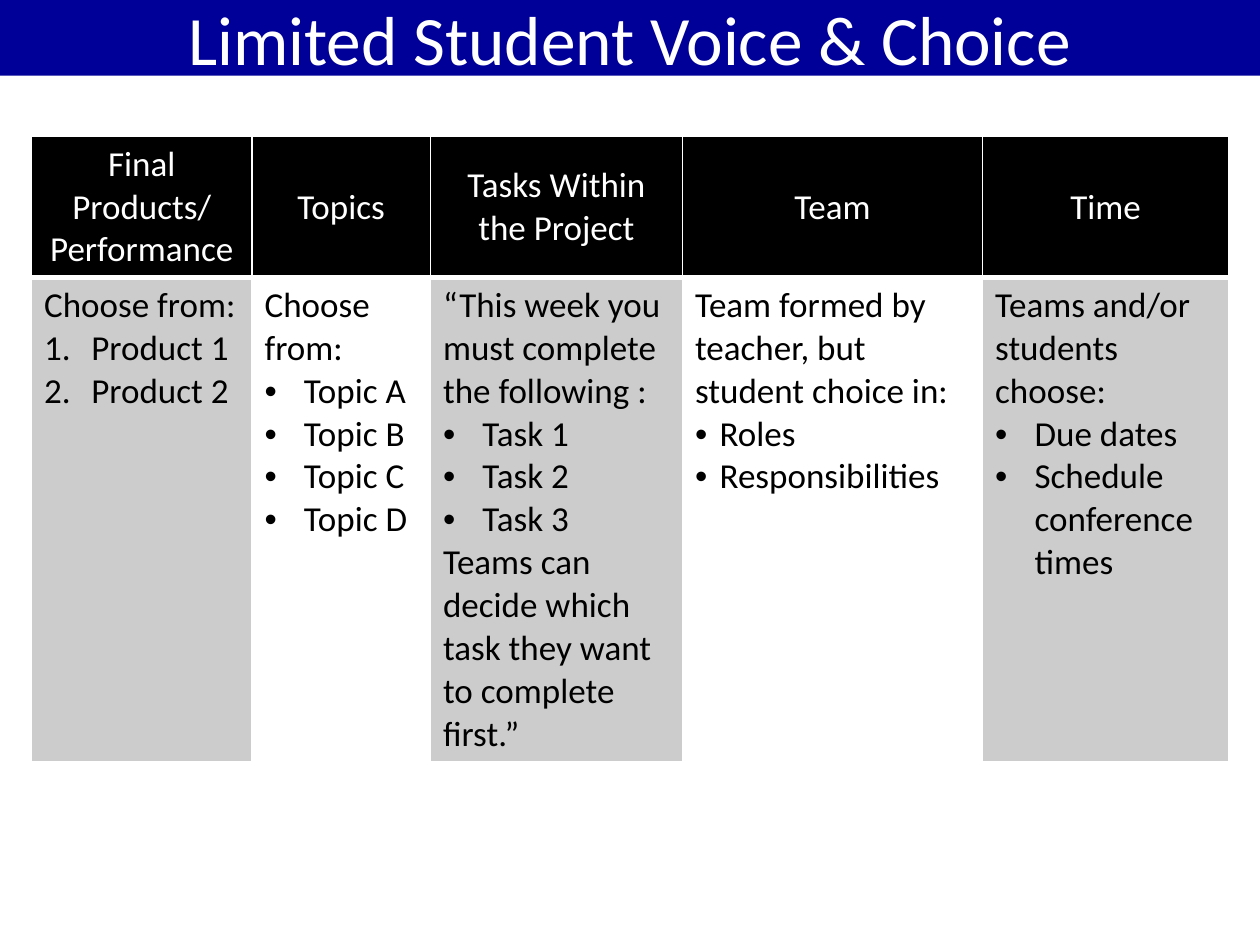
from dataclasses import dataclass

from lxml import etree
from pptx import Presentation
from pptx.dml.color import RGBColor
from pptx.enum.shapes import MSO_SHAPE
from pptx.enum.text import MSO_ANCHOR, PP_ALIGN
from pptx.oxml.ns import qn
from pptx.util import Pt

RECTANGLE = MSO_SHAPE.RECTANGLE
MIDDLE, TOP = MSO_ANCHOR.MIDDLE, MSO_ANCHOR.TOP
CENTER, LEFT = PP_ALIGN.CENTER, PP_ALIGN.LEFT

NAVY = RGBColor(0x00, 0x00, 0x99)
BLACK = RGBColor(0x00, 0x00, 0x00)
GREY = RGBColor(0xCC, 0xCC, 0xCC)
WHITE = RGBColor(0xFF, 0xFF, 0xFF)

FONT_NAME = "Calibri"
TITLE_SIZE = 39.6
TABLE_SIZE = 20
HEADER_HEIGHT = 80
BODY_HEIGHT = 276


@dataclass
class ChoiceColumn:
    heading: str
    width: float
    intro: str
    options: list[str]
    indent: float = 22.5
    numbered: bool = False
    closing: str = ""


CHOICES = [
    ChoiceColumn("Final Products/ Performance", 126, "Choose from:",
                 ["Product 1", "Product 2"], indent=27, numbered=True),
    ChoiceColumn("Topics", 102, "Choose from:",
                 ["Topic A", "Topic B", "Topic C", "Topic D"]),
    ChoiceColumn("Tasks Within the Project", 144,
                 "“This week you must complete the following :",
                 ["Task 1", "Task 2", "Task 3"],
                 closing="Teams can decide which task they want to complete first.”"),
    ChoiceColumn("Team", 171.5, "Team formed by teacher, but student choice in:",
                 ["Roles", "Responsibilities"], indent=14),
    ChoiceColumn("Time", 140.5, "Teams and/or students choose:",
                 ["Due dates", "Schedule conference times"]),
]


def style_text(paragraph, size: float, color: RGBColor, align) -> None:
    paragraph.alignment = align
    for run in paragraph.runs:
        run.font.name = FONT_NAME
        run.font.size = Pt(size)
        run.font.bold = False
        run.font.color.rgb = color


def add_marker(paragraph, indent: float, numbered: bool) -> None:
    properties = paragraph._p.get_or_add_pPr()
    properties.set("marL", str(Pt(indent)))
    properties.set("indent", str(-Pt(indent)))
    if numbered:
        etree.SubElement(properties, qn("a:buFont"), typeface="+mj-lt")
        etree.SubElement(properties, qn("a:buAutoNum"), type="arabicPeriod")
    else:
        etree.SubElement(properties, qn("a:buFont"), typeface="Arial")
        etree.SubElement(properties, qn("a:buChar"), char="•")


def style_cell(cell, fill: RGBColor, anchor, bottom_width: float) -> None:
    properties = cell._tc.get_or_add_tcPr()
    borders = {"a:lnL": 1, "a:lnR": 1, "a:lnT": 1, "a:lnB": bottom_width}
    for side, width in borders.items():
        line = etree.SubElement(properties, qn(side), w=str(Pt(width)))
        line_fill = etree.SubElement(line, qn("a:solidFill"))
        etree.SubElement(line_fill, qn("a:srgbClr"), val=str(WHITE))
    cell.fill.solid()
    cell.fill.fore_color.rgb = fill
    cell.vertical_anchor = anchor


def fill_heading(cell, choice: ChoiceColumn) -> None:
    style_cell(cell, BLACK, MIDDLE, bottom_width=3)
    cell.text_frame.text = choice.heading
    style_text(cell.text_frame.paragraphs[0], TABLE_SIZE, WHITE, CENTER)


def fill_body(cell, choice: ChoiceColumn, fill: RGBColor) -> None:
    style_cell(cell, fill, TOP, bottom_width=1)
    frame = cell.text_frame
    frame.text = choice.intro
    for option in choice.options:
        paragraph = frame.add_paragraph()
        paragraph.text = option
        add_marker(paragraph, choice.indent, choice.numbered)
    if choice.closing:
        frame.add_paragraph().text = choice.closing
    for paragraph in frame.paragraphs:
        style_text(paragraph, TABLE_SIZE, BLACK, LEFT)


def add_title(slide, title: str) -> None:
    banner = slide.shapes.add_shape(RECTANGLE, Pt(0), Pt(0), Pt(720), Pt(43.2))
    banner.shadow.inherit = False
    banner.fill.solid()
    banner.fill.fore_color.rgb = NAVY
    banner.line.fill.background()
    frame = banner.text_frame
    frame.word_wrap = True
    frame.vertical_anchor = MIDDLE
    frame.text = title
    style_text(frame.paragraphs[0], TITLE_SIZE, WHITE, CENTER)


def add_choice_table(slide, choices: list[ChoiceColumn]) -> None:
    total_width = sum(choice.width for choice in choices)
    table = slide.shapes.add_table(
        2, len(choices), Pt(18), Pt(78), Pt(total_width),
        Pt(HEADER_HEIGHT + BODY_HEIGHT)).table
    table.horz_banding = False
    table.rows[0].height = Pt(HEADER_HEIGHT)
    table.rows[1].height = Pt(BODY_HEIGHT)
    for index, choice in enumerate(choices):
        table.columns[index].width = Pt(choice.width)
        fill_heading(table.cell(0, index), choice)
        fill_body(table.cell(1, index), choice, WHITE if index % 2 else GREY)


def main() -> None:
    presentation = Presentation()
    presentation.slide_width = Pt(720)
    presentation.slide_height = Pt(540)
    slide = presentation.slides.add_slide(presentation.slide_layouts[6])
    add_title(slide, "Limited Student Voice & Choice")
    add_choice_table(slide, CHOICES)
    presentation.save("out.pptx")


if __name__ == "__main__":
    main()
